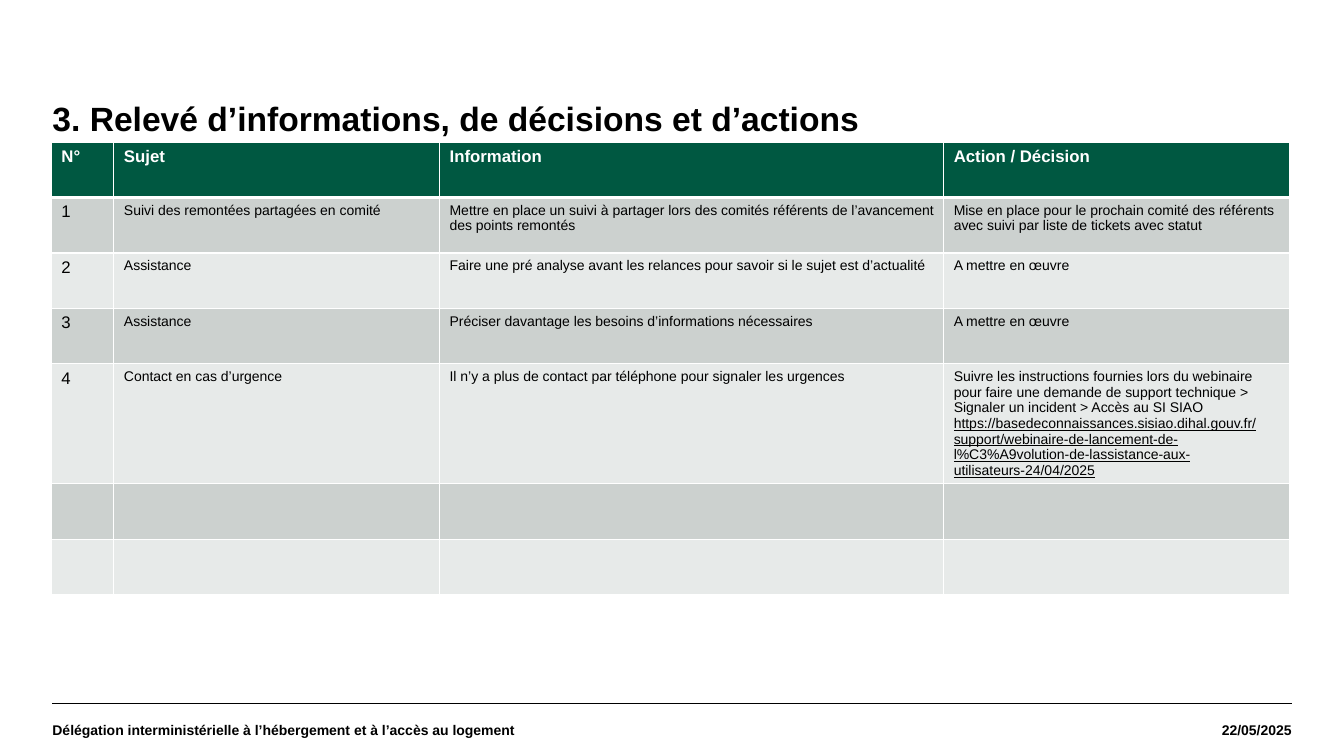
import pptx
import pptx.dml.color
import pptx.enum.shapes
import pptx.enum.text
import pptx.oxml
import pptx.oxml.ns
import pptx.util
from pptx.util import Inches

RGBColor = pptx.dml.color.RGBColor
PP_ALIGN = pptx.enum.text.PP_ALIGN
MSO_ANCHOR = pptx.enum.text.MSO_ANCHOR

BLACK = RGBColor(0x00, 0x00, 0x00)
WHITE = RGBColor(0xFF, 0xFF, 0xFF)
GREEN = RGBColor(0x00, 0x58, 0x41)
DARK_BAND = RGBColor(0xCC, 0xD1, 0xCF)
LIGHT_BAND = RGBColor(0xE7, 0xEA, 0xE9)
FONT = "Arial"

TITLE = "3. Relevé d’informations, de décisions et d’actions"
ORGANISATION = "Délégation interministérielle à l’hébergement et à l’accès au logement"
DATE = "22/05/2025"
URL = ("https://basedeconnaissances.sisiao.dihal.gouv.fr/support/"
       "webinaire-de-lancement-de-l%C3%A9volution-de-lassistance-aux-"
       "utilisateurs-24/04/2025")
COLUMN_WIDTHS = [0.62, 3.23, 5, 3.43]
ROW_HEIGHT = 0.55
ROWS = [
    ["N°", "Sujet", "Information", "Action / Décision"],
    ["1", "Suivi des remontées partagées en comité",
     "Mettre en place un suivi à partager lors des comités référents de "
     "l’avancement des points remontés",
     "Mise en place pour le prochain comité des référents avec suivi par "
     "liste de tickets avec statut"],
    ["2", "Assistance",
     "Faire une pré analyse avant les relances pour savoir si le sujet est "
     "d’actualité",
     "A mettre en œuvre"],
    ["3", "Assistance",
     "Préciser davantage les besoins d’informations nécessaires",
     "A mettre en œuvre"],
    ["4", "Contact en cas d’urgence",
     "Il n’y a plus de contact par téléphone pour signaler les urgences",
     "Suivre les instructions fournies lors du webinaire pour faire une "
     "demande de support technique > Signaler un incident > Accès au SI SIAO\n"
     + URL],
    [""] * 4,
    [""] * 4,
]


def set_font(font, size, color=BLACK, bold=False):
    font.name = FONT
    font.size = pptx.util.Pt(size)
    font.bold = bold
    font.color.rgb = color


def remove_margins(tf):
    tf.margin_left = tf.margin_right = tf.margin_top = tf.margin_bottom = 0
    tf.word_wrap = True


def add_title(s, left, top, width, height):
    sp = s.shapes.title
    sp.left, sp.top, sp.width, sp.height = map(Inches, (left, top, width, height))
    tf = sp.text_frame
    tf.text = TITLE
    remove_margins(tf)
    tf.auto_size = pptx.enum.text.MSO_AUTO_SIZE.NONE
    tf.vertical_anchor = MSO_ANCHOR.TOP
    p = tf.paragraphs[0]
    p.alignment = PP_ALIGN.LEFT
    p.line_spacing = 0.9
    set_font(p.runs[0].font, 24, bold=True)


def set_borders(cell, top, bottom):
    """Draw white borders; top and bottom are widths in points."""
    tc_pr = cell._tc.get_or_add_tcPr()
    for side, width in (("L", 1), ("R", 1), ("T", top), ("B", bottom)):
        tc_pr.append(pptx.oxml.parse_xml(
            f'<a:ln{side} {pptx.oxml.ns.nsdecls("a")} w="{pptx.util.Pt(width)}">'
            f'<a:solidFill><a:srgbClr val="{WHITE}"/></a:solidFill></a:ln{side}>'))


def fill_cell(cell, text, row, column):
    header = row == 0
    set_borders(cell, 3 if row == 1 else 1, 3 if header else 1)
    cell.fill.solid()
    cell.fill.fore_color.rgb = (
        GREEN if header else DARK_BAND if row % 2 else LIGHT_BAND)
    cell.text_frame.text = text
    size = 12 if header or column == 0 else 10
    for p in cell.text_frame.paragraphs:
        set_font(p.font, size)
        for r in p.runs:
            set_font(r.font, size, WHITE if header else BLACK, header)
            if r.text == URL:
                r.font.underline = True


def add_actions_table(s, left, top):
    table = s.shapes.add_table(
        len(ROWS), len(COLUMN_WIDTHS), Inches(left), Inches(top),
        Inches(sum(COLUMN_WIDTHS)), Inches(ROW_HEIGHT * len(ROWS))).table
    for column, width in zip(table.columns, COLUMN_WIDTHS):
        column.width = Inches(width)
    for i, texts in enumerate(ROWS):
        table.rows[i].height = Inches(ROW_HEIGHT)
        for j, text in enumerate(texts):
            fill_cell(table.cell(i, j), text, i, j)
    table.rows[4].height = Inches(1.19)


def add_footer_text(s, text, left, top, width, height, alignment):
    tf = s.shapes.add_textbox(*map(Inches, (left, top, width, height))).text_frame
    tf.text = text
    remove_margins(tf)
    tf.vertical_anchor = MSO_ANCHOR.MIDDLE
    p = tf.paragraphs[0]
    p.alignment = alignment
    set_font(p.runs[0].font, 10, bold=True)


def add_footer(s, left, top, width, height):
    rule = s.shapes.add_connector(
        pptx.enum.shapes.MSO_CONNECTOR.STRAIGHT,
        Inches(left), Inches(top), Inches(left + width), Inches(top))
    rule.line.color.rgb = BLACK
    rule.line.width = pptx.util.Pt(0.8)
    rule._element.spPr.append(pptx.oxml.parse_xml(
        f'<a:effectLst {pptx.oxml.ns.nsdecls("a")}/>'))
    date_width = 1.71
    add_footer_text(s, ORGANISATION, left, top, 8.61, height, PP_ALIGN.LEFT)
    add_footer_text(s, DATE, left + width - date_width, top, date_width, height,
                    PP_ALIGN.RIGHT)


def main():
    prs = pptx.Presentation()
    prs.slide_width, prs.slide_height = Inches(13.33), Inches(7.5)
    s = prs.slides.add_slide(prs.slide_layouts[5])
    add_title(s, 0.52, 1.02, 12.28, 1.05)
    add_actions_table(s, 0.51, 1.41)
    add_footer(s, 0.52, 6.98, 12.29, 0.52)
    prs.save("out.pptx")


if __name__ == "__main__":
    main()
